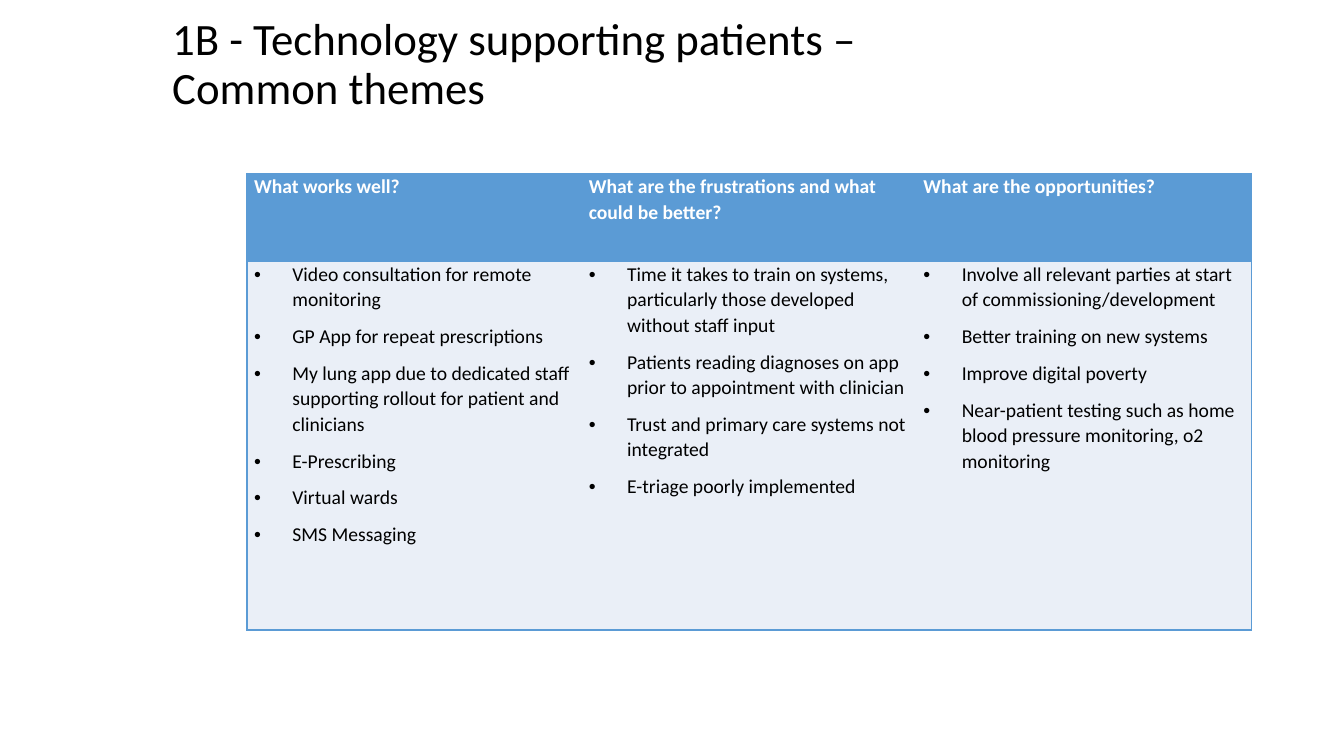
from dataclasses import dataclass

from lxml.etree import SubElement
from pptx import Presentation
from pptx.dml.color import RGBColor
from pptx.enum.text import MSO_ANCHOR
from pptx.oxml.ns import qn
from pptx.util import Pt

PX = 9144
FONT = "Calibri"
COLORS = {"blue": "5B9BD5", "pale": "EAEFF7", "white": "FFFFFF", "black": "000000"}
TITLE = "1B - Technology supporting patients – Common themes"
ROW_HEIGHTS = (87, 366)
COLUMN_WIDTH = 332
INDENT = 38


@dataclass(frozen=True)
class Theme:
    heading: str
    points: tuple[str, ...]


THEMES = (
    Theme("What works well?", (
        "Video consultation for remote monitoring",
        "GP App for repeat prescriptions",
        "My lung app due to dedicated staff supporting rollout for patient and clinicians",
        "E-Prescribing",
        "Virtual wards",
        "SMS Messaging",
    )),
    Theme("What are the frustrations and what could be better?", (
        "Time it takes to train on systems, particularly those developed without staff input",
        "Patients reading diagnoses on app prior to appointment with clinician",
        "Trust and primary care systems not integrated",
        "E-triage poorly implemented",
    )),
    Theme("What are the opportunities?", (
        "Involve all relevant parties at start of commissioning/development",
        "Better training on new systems",
        "Improve digital poverty",
        "Near-patient testing such as home blood pressure monitoring, o2 monitoring",
    )),
)


def px(n: int) -> int:
    return n * PX


def style_runs(p, size: int, color: str, bold: bool = False) -> None:
    for r in p.runs:
        r.font.name = FONT
        r.font.size = Pt(size)
        r.font.bold = bold
        r.font.color.rgb = RGBColor.from_string(COLORS[color])


def add_bullet(p) -> None:
    pPr = p._p.get_or_add_pPr()
    pPr.set("marL", str(px(INDENT)))
    pPr.set("indent", str(-px(INDENT)))
    SubElement(pPr, qn("a:buFont"), typeface="Arial")
    SubElement(pPr, qn("a:buChar"), char="•")


def set_borders(cell, visible: str) -> None:
    tcPr = cell._tc.get_or_add_tcPr()
    for side in "LRTB":
        ln = SubElement(tcPr, qn(f"a:ln{side}"), w=str(Pt(1)))
        if side in visible:
            fill = SubElement(ln, qn("a:solidFill"))
            SubElement(fill, qn("a:srgbClr"), val=COLORS["blue"])
        else:
            SubElement(ln, qn("a:noFill"))


def fill_cell(cell, lines: tuple[str, ...], sides: str, header: bool) -> None:
    cell.margin_left = cell.margin_right = px(7)
    cell.margin_top = cell.margin_bottom = 0
    set_borders(cell, sides)
    cell.fill.solid()
    cell.fill.fore_color.rgb = RGBColor.from_string(COLORS["blue" if header else "pale"])
    tf = cell.text_frame
    tf.text = "\n".join(lines)
    for p in tf.paragraphs:
        p.line_spacing = 1.07
        p.space_after = Pt(8)
        if not header:
            add_bullet(p)
        style_runs(p, 14, "white" if header else "black", header)


def add_title(s) -> None:
    tf = s.shapes.add_textbox(px(161), px(12), px(850), px(106)).text_frame
    tf.word_wrap = True
    tf.vertical_anchor = MSO_ANCHOR.MIDDLE
    tf.text = TITLE
    p = tf.paragraphs[0]
    p.line_spacing = 0.9
    style_runs(p, 32, "black")


def add_themes(s) -> None:
    last = len(THEMES) - 1
    table = s.shapes.add_table(
        len(ROW_HEIGHTS), len(THEMES), px(245), px(172),
        px(COLUMN_WIDTH * len(THEMES)), px(sum(ROW_HEIGHTS)),
    ).table
    table.horz_banding = False
    for row, height in zip(table.rows, ROW_HEIGHTS):
        row.height = px(height)
    for i, theme in enumerate(THEMES):
        table.columns[i].width = px(COLUMN_WIDTH)
        sides = "TB" + ("L" if i == 0 else "") + ("R" if i == last else "")
        fill_cell(table.cell(0, i), (theme.heading,), sides, True)
        fill_cell(table.cell(1, i), theme.points, sides, False)


def main() -> None:
    prs = Presentation()
    prs.slide_width, prs.slide_height = px(1333), px(750)
    s = prs.slides.add_slide(prs.slide_layouts[6])
    add_title(s)
    add_themes(s)
    prs.save("out.pptx")


if __name__ == "__main__":
    main()
